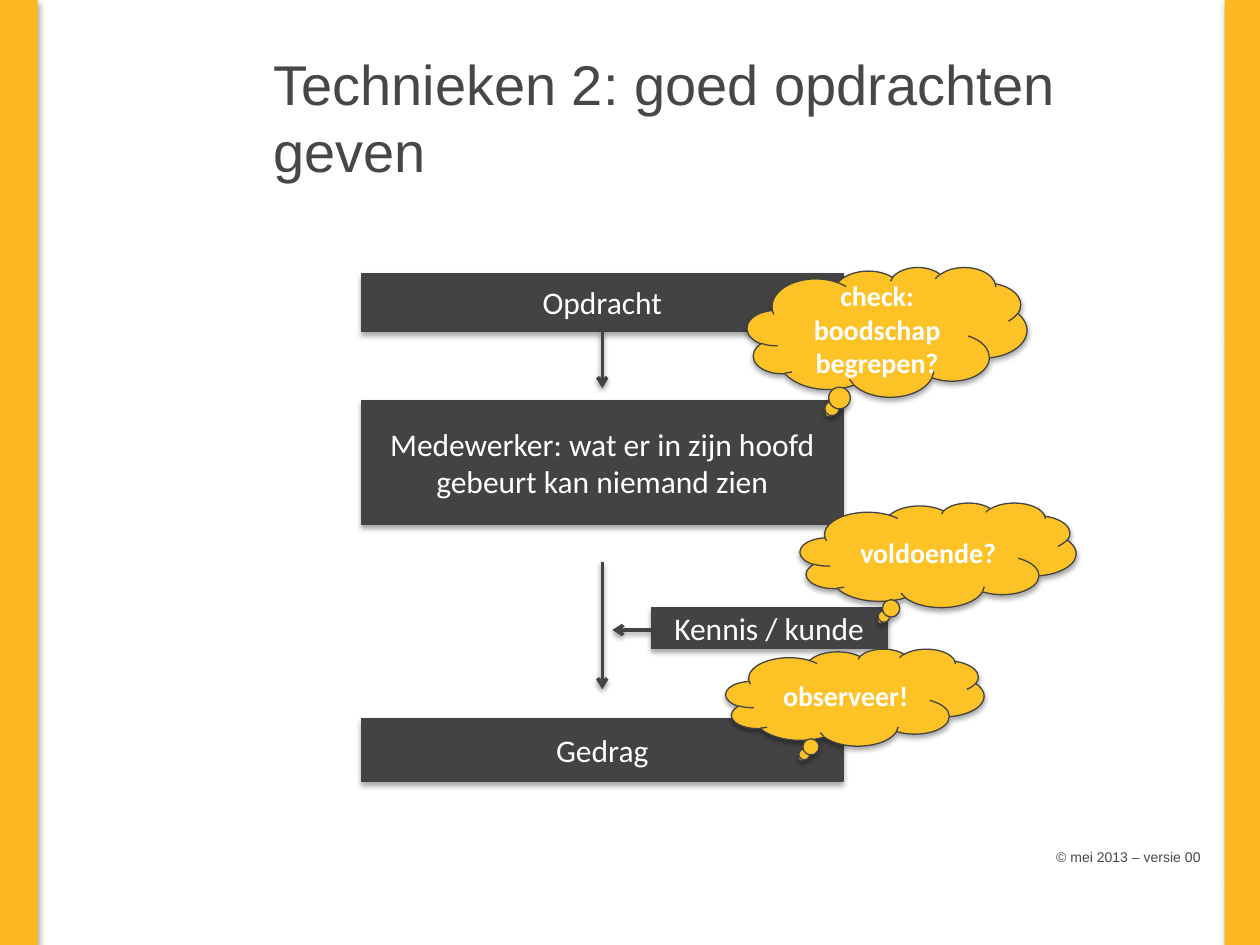
from dataclasses import dataclass

from lxml import etree
from pptx import Presentation
from pptx.dml.color import RGBColor
from pptx.enum import shapes, text
from pptx.oxml import ns
from pptx.util import Inches, Pt


@dataclass(frozen=True)
class Theme:
    band: str = "FCB723"
    cloud: str = "FDC225"
    dark: str = "434343"
    ink: str = "464749"
    white: str = "FFFFFF"
    heading_font: str = "Arial"
    body_font: str = "Calibri"
    title_size: float = 32
    step_size: float = 18
    cloud_size: float = 16
    footer_size: float = 8
    outline: float = 0.75
    arrow: float = 2


@dataclass(frozen=True)
class Box:
    """A rectangle in inches."""
    left: float
    top: float
    width: float
    height: float

    def inner(self, left, top, width, height):
        return Box(self.left + left, self.top + top, width, height)

    def lengths(self):
        return [Inches(v) for v in (self.left, self.top, self.width, self.height)]


THEME = Theme()
TITLE = dict(name=THEME.heading_font, size=Pt(THEME.title_size), color=THEME.ink)
FOOTER = dict(TITLE, size=Pt(THEME.footer_size))
STEP = dict(name=THEME.body_font, size=Pt(THEME.step_size), color=THEME.white)
CLOUD = dict(STEP, size=Pt(THEME.cloud_size), bold=True)


def write(shape, words, style, align):
    frame = shape.text_frame
    frame.word_wrap = True
    frame.vertical_anchor = text.MSO_ANCHOR.MIDDLE
    para = frame.paragraphs[0]
    para.alignment = align
    span = para.add_run()
    span.text = words
    for key, value in style.items():
        if key == "color":
            span.font.color.rgb = RGBColor.from_string(value)
        else:
            setattr(span.font, key, value)


def add_xml(parent, tag, **attributes):
    return etree.SubElement(parent, ns.qn(tag), attributes)


def add_shadow(effects, distance, opacity):
    """Put a soft shadow that falls straight down in an effect list."""
    shadow = add_xml(effects, "a:outerShdw", blurRad=str(Pt(3.1)),
                     dist=str(Pt(distance)), dir="5400000", rotWithShape="0")
    color = add_xml(shadow, "a:srgbClr", val="000000")
    add_xml(color, "a:alpha", val=str(opacity * 1000))


def add_block(page, kind, box, fill, outline=None):
    shape = page.shapes.add_shape(kind, *box.lengths())
    shape.fill.solid()
    shape.fill.fore_color.rgb = RGBColor.from_string(fill)
    if outline:
        shape.line.color.rgb = RGBColor.from_string(outline)
        shape.line.width = Pt(THEME.outline)
    else:
        shape.line.fill.background()
    shape.shadow.inherit = False
    add_shadow(shape._element.spPr.find(ns.qn("a:effectLst")), 1.8, 35)
    return shape


def add_step(page, box, words):
    shape = add_block(page, shapes.MSO_SHAPE.RECTANGLE, box, THEME.dark, THEME.dark)
    write(shape, words, STEP, text.PP_ALIGN.CENTER)


def add_cloud(page, box, words):
    shape = add_block(page, shapes.MSO_SHAPE.CLOUD_CALLOUT, box, THEME.cloud, THEME.dark)
    write(shape, words, CLOUD, text.PP_ALIGN.CENTER)


def add_arrow(page, box):
    """Draw an arrow from the box's left top over its signed width and height."""
    left, top, width, height = box.lengths()
    line = page.shapes.add_connector(
        shapes.MSO_CONNECTOR.STRAIGHT, left, top, left + width, top + height)
    line.line.color.rgb = RGBColor.from_string(THEME.dark)
    line.line.width = Pt(THEME.arrow)
    properties = line._element.spPr
    add_xml(properties.find(ns.qn("a:ln")), "a:tailEnd", type="arrow")
    add_shadow(add_xml(properties, "a:effectLst"), 1.6, 38)


def add_text(page, box, words, style, align):
    write(page.shapes.add_textbox(*box.lengths()), words, style, align)


def add_frame(page, box):
    """Place the footer and the two side bands."""
    add_text(page, box.inner(7.3, 6.6, 2.33, 0.4), "© mei 2013 – versie 00",
             FOOTER, text.PP_ALIGN.RIGHT)
    for left in (9.72, 0):
        add_block(page, shapes.MSO_SHAPE.RECTANGLE,
                  box.inner(left, 0, 0.3, box.height), THEME.band)


def add_flow(page, box):
    """Place the steps from task to behaviour, with the check in each cloud."""
    step_width, middle = 3.82, 1.91
    for top, height, words in (
            (0.05, 0.46, "Opdracht"),
            (1.06, 0.98, "Medewerker: wat er in zijn hoofd gebeurt kan niemand zien"),
            (3.58, 0.5, "Gedrag")):
        add_step(page, box.inner(0, top, step_width, height), words)
    add_step(page, box.inner(2.3, 2.7, 1.87, 0.33), "Kennis / kunde")
    for left, top, width, height in (
            (middle, 0.51, 0, 0.45), (middle, 2.34, 0, 1.01), (2.3, 2.88, -0.31, 0)):
        add_arrow(page, box.inner(left, top, width, height))
    for left, top, width, height, words in (
            (3.48, 1.87, 2.19, 0.83, "voldoende?"),
            (3.06, 0, 2.22, 1.03, "check: boodschap begrepen?"),
            (2.89, 3.03, 2.05, 0.77, "observeer!")):
        add_cloud(page, box.inner(left, top, width, height), words)


def main():
    deck = Presentation()
    deck.slide_width, deck.slide_height = Inches(10), Inches(7.5)
    page = deck.slides.add_slide(deck.slide_layouts[6])
    add_frame(page, Box(0, 0, 10, 7.5))
    add_text(page, Box(2.07, 0.3, 7.43, 1.25), "Technieken 2: goed opdrachten geven",
             TITLE, text.PP_ALIGN.LEFT)
    add_flow(page, Box(2.87, 2.12, 5.67, 4.08))
    deck.save("out.pptx")


if __name__ == "__main__":
    main()
